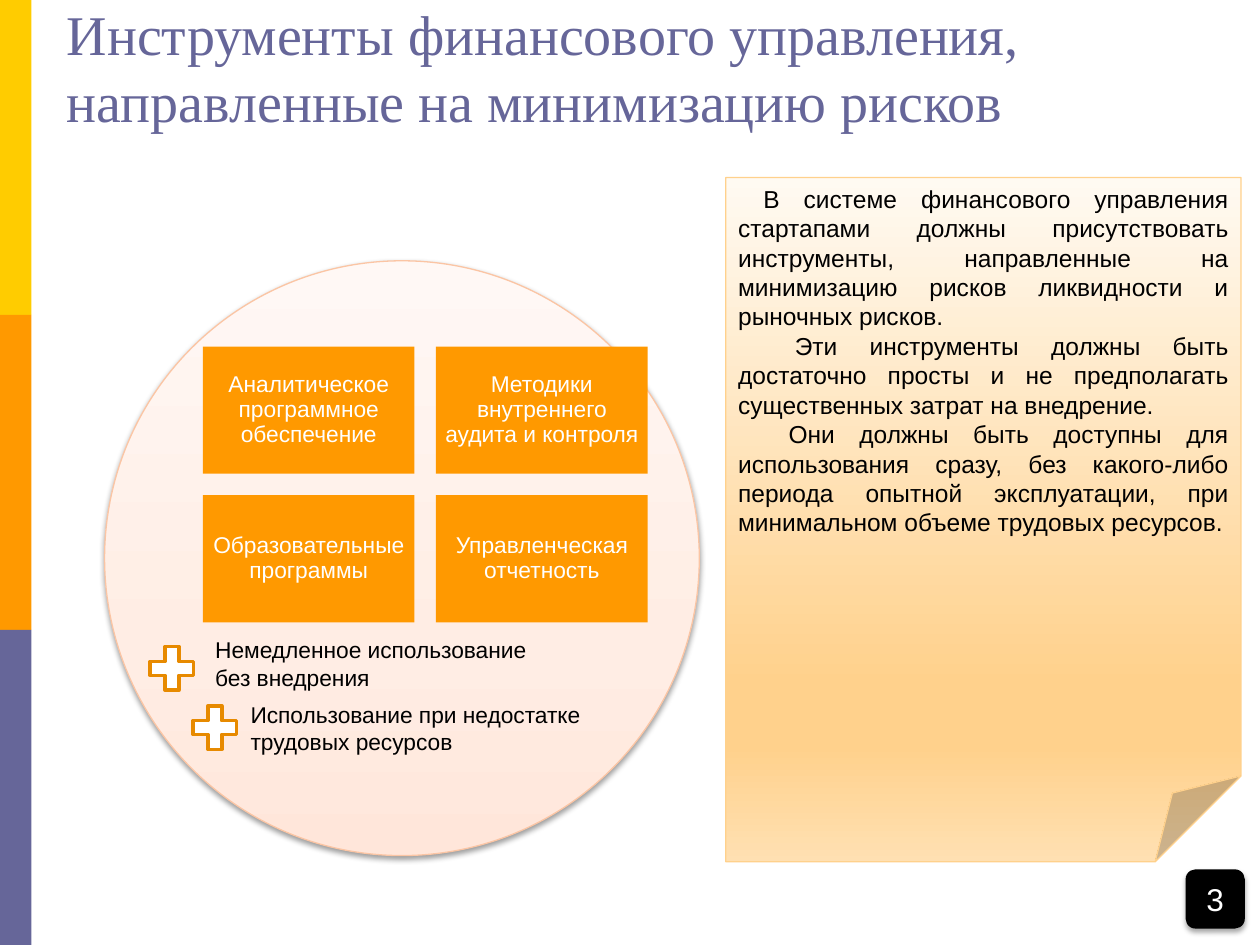
from dataclasses import dataclass
from itertools import product

from lxml.etree import SubElement
from pptx import Presentation
from pptx.dml.color import RGBColor
from pptx.enum.shapes import MSO_SHAPE as Shape
from pptx.enum.text import MSO_ANCHOR as Anchor, MSO_AUTO_SIZE as AutoSize, PP_ALIGN as Align
from pptx.oxml.ns import qn
from pptx.util import Inches, Pt


@dataclass(frozen=True)
class Theme:
    sidebar: tuple = ("FFCC00", "FF9900", "666699")
    accent: str = "FF9900"
    title: str = "666699"
    dark: str = "000000"
    light: str = "FFFFFF"
    plus_line: str = "E78A00"
    circle_line: str = "FBC5A4"
    note_line: str = "FFD18C"
    circle_stops: tuple = ((0, "FFE6DA"), (35, "FFEDE4"), (100, "FFF8F5"))
    note_stops: tuple = ((0, "FFFAF2"), (74, "FFD18C"), (83, "FFD18C"), (100, "FFE0B2"))
    title_font: str = "Times New Roman"
    body_font: str = "Arial"
    title_size: int = 32
    number_size: int = 18
    note_size: int = 14
    label_size: int = 13


THEME = Theme()
WIDTH, HEIGHT = 10, 7.5
TOOLS = (
    "Аналитическое программное обеспечение",
    "Методики внутреннего аудита и контроля",
    "Образовательные программы",
    "Управленческая отчетность",
)
BENEFITS = (
    ("Немедленное использование без внедрения", (1.13, 5.07), (1.61, 5)),
    ("Использование при недостатке трудовых ресурсов", (1.47, 5.54), (1.89, 5.51)),
)
NOTES = (
    ("В системе финансового управления стартапами должны присутствовать инструменты, "
     "направленные на минимизацию рисков ликвидности и рыночных рисков.", 0.2),
    ("Эти инструменты должны быть достаточно просты и не предполагать существенных "
     "затрат на внедрение.", 0.45),
    ("Они должны быть доступны для использования сразу, без какого-либо периода "
     "опытной эксплуатации, при минимальном объеме трудовых ресурсов.", 0.4),
)


def apply(target, values):
    for name, value in values.items():
        setattr(target, name, value)


def color(value):
    return RGBColor.from_string(value)


def add_block(slide, kind, box, fill=None, line=None, line_width=0.75):
    shape = slide.shapes.add_shape(kind, *map(Inches, box))
    shape.shadow.inherit = False
    if fill:
        shape.fill.solid()
        shape.fill.fore_color.rgb = color(fill)
    if line:
        shape.line.color.rgb = color(line)
        shape.line.width = Pt(line_width)
    else:
        shape.line.fill.background()
    return shape


def set_gradient(shape, stops, angle):
    shape.fill.gradient()
    shape.fill.gradient_angle = angle
    stop_list = shape._element.spPr.find(".//" + qn("a:gsLst"))
    for stop in list(stop_list):
        stop_list.remove(stop)
    for position, value in stops:
        stop = SubElement(stop_list, qn("a:gs"), pos=str(position * 1000))
        SubElement(stop, qn("a:srgbClr"), val=value)


def set_shadow(shape, opacity, distance):
    effects = shape._element.spPr.find(qn("a:effectLst"))
    shadow = SubElement(effects, qn("a:outerShdw"), blurRad=str(Pt(3.1)),
                        dist=str(Pt(distance)), dir="5400000", rotWithShape="0")
    shade = SubElement(shadow, qn("a:srgbClr"), val=THEME.dark)
    SubElement(shade, qn("a:alpha"), val=str(opacity * 1000))


def write(shape, texts, size, ink, font=THEME.body_font, align=Align.LEFT,
          anchor=Anchor.TOP, margin=None, indents=(), spacing=None):
    frame = shape.text_frame
    apply(frame, {"word_wrap": True, "auto_size": AutoSize.NONE, "vertical_anchor": anchor})
    if margin is not None:
        sides = ("left", "top", "right", "bottom")
        apply(frame, {f"margin_{side}": Inches(margin) for side in sides})
    frame.text = "\n".join(texts)
    for paragraph in frame.paragraphs:
        apply(paragraph, {"alignment": align, "line_spacing": spacing})
        apply(paragraph.font, {"name": font, "size": Pt(size)})
        paragraph.font.color.rgb = color(ink)
    for paragraph, indent in zip(frame.paragraphs, indents):
        paragraph._p.get_or_add_pPr().set("indent", str(Inches(indent)))


def add_sidebar(slide):
    band = HEIGHT / len(THEME.sidebar)
    for row, fill in enumerate(THEME.sidebar):
        add_block(slide, Shape.RECTANGLE, (0, row * band, WIDTH / 40, band), fill)


def add_title(slide):
    title = slide.shapes.title
    apply(title, dict(zip(("left", "top", "width", "height"),
                          map(Inches, (0.43, 0.09, 9.45, 1.02)))))
    write(title, ["Инструменты финансового управления, направленные на минимизацию рисков"],
          THEME.title_size, THEME.title, THEME.title_font, anchor=Anchor.BOTTOM)


def add_circle(slide):
    circle = add_block(slide, Shape.FLOWCHART_CONNECTOR, (0.83, 2.07, 4.72, 4.72),
                       line=THEME.circle_line)
    set_gradient(circle, THEME.circle_stops, 90)
    set_shadow(circle, 38, 1.6)


def add_note(slide):
    note = add_block(slide, Shape.FOLDED_CORNER, (5.76, 1.41, 4.09, 5.43),
                     line=THEME.note_line)
    set_gradient(note, THEME.note_stops, 270)
    texts, indents = zip(*NOTES)
    write(note, texts, THEME.note_size, THEME.dark, align=Align.JUSTIFY, indents=indents)


def add_tools(slide):
    left, top, width, height, gap = 1.61, 2.75, 1.68, 1.01, 0.17
    for text, (row, column) in zip(TOOLS, product(range(2), repeat=2)):
        box = (left + column * (width + gap), top + row * (height + gap), width, height)
        tile = add_block(slide, Shape.RECTANGLE, box, THEME.accent)
        write(tile, [text], THEME.label_size, THEME.light, align=Align.CENTER,
              anchor=Anchor.MIDDLE, margin=0.05, spacing=0.9)


def add_benefits(slide):
    for text, plus_corner, label_corner in BENEFITS:
        add_block(slide, Shape.MATH_PLUS, (*plus_corner, 0.47, 0.47),
                  THEME.light, THEME.plus_line, 2)
        label = slide.shapes.add_textbox(*map(Inches, (*label_corner, 2.83, 0.54)))
        write(label, [text], THEME.label_size, THEME.dark)


def add_number(slide):
    badge = add_block(slide, Shape.ROUNDED_RECTANGLE, (9.41, 6.9, 0.47, 0.47), THEME.dark)
    set_shadow(badge, 35, 1.8)
    write(badge, ["3"], THEME.number_size, THEME.light, align=Align.CENTER,
          anchor=Anchor.MIDDLE)


def main():
    presentation = Presentation()
    apply(presentation, {"slide_width": Inches(WIDTH), "slide_height": Inches(HEIGHT)})
    slide = presentation.slides.add_slide(presentation.slide_layouts[5])
    for add_part in (add_sidebar, add_title, add_circle, add_note,
                     add_tools, add_benefits, add_number):
        add_part(slide)
    presentation.save("out.pptx")


if __name__ == "__main__":
    main()
